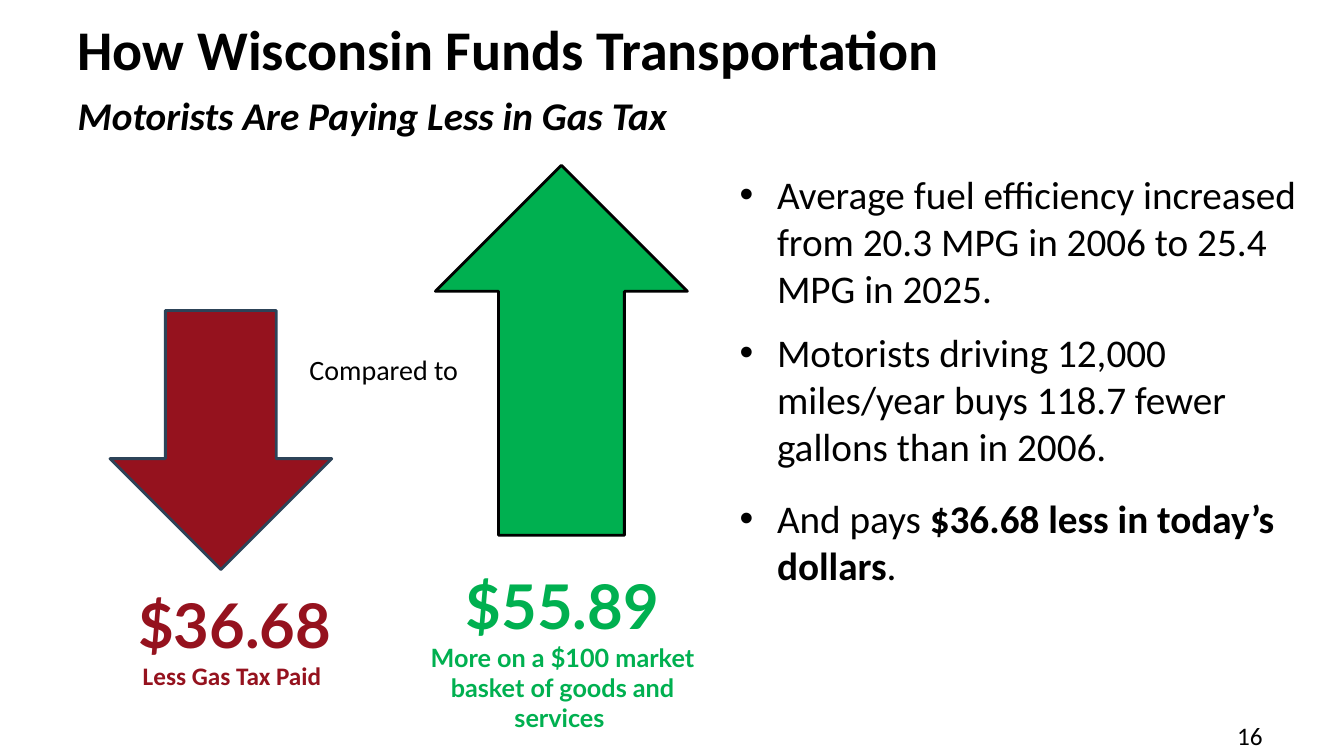
"""Build the slide comparing gas tax savings with the rise in prices."""
from lxml import etree
from pptx import Presentation
from pptx import util as u
from pptx.dml.color import RGBColor
from pptx.enum import shapes, text
from pptx.oxml.ns import qn

WIDTH, HEIGHT = 13.33, 7.5
BLACK, RED, GREEN, SLATE = "000000", "95121E", "00B050", "2D4358"


def color(value):
    """Turn a hex string into a colour."""
    return RGBColor.from_string(value)


def area(left, top, width, height):
    """Turn percentages of the slide's size into lengths."""
    shares = zip((left, top, width, height), (WIDTH, HEIGHT) * 2)
    return [u.Inches(share * side / 100) for share, side in shares]


def add_span(para, words, size=18, face="Calibri", ink=BLACK, bold=False, italic=False):
    """Append formatted words to a paragraph."""
    span = para.add_run()
    span.text = words
    font = span.font
    font.size, font.name = u.Pt(size), face
    font.bold, font.italic = bold, italic
    font.color.rgb = color(ink)


def add_bullet(para, indent=0.37):
    """Give a paragraph a hanging round bullet."""
    properties = para._p.get_or_add_pPr()
    properties.set("marL", str(u.Inches(indent)))
    properties.set("indent", str(-u.Inches(indent)))
    etree.SubElement(properties, qn("a:buFont")).set("typeface", "Arial")
    etree.SubElement(properties, qn("a:buChar")).set("char", "•")


def add_box(page, place):
    """Add a wrapping text box and return its frame."""
    frame = page.shapes.add_textbox(*area(*place)).text_frame
    frame.word_wrap = True
    return frame


def add_label(page, place, words, **style):
    """Add a one-line text box."""
    add_span(add_box(page, place).paragraphs[0], words, **style)


def add_title(page, place, heading, subheading):
    """Place the title and its italic second line."""
    title = page.shapes.title
    title.left, title.top, title.width, title.height = area(*place)
    frame = title.text_frame
    frame.vertical_anchor = text.MSO_ANCHOR.MIDDLE
    frame.auto_size = text.MSO_AUTO_SIZE.NONE
    para = frame.paragraphs[0]
    para.alignment = text.PP_ALIGN.LEFT
    para.line_spacing = u.Pt(40)
    add_span(para, heading, size=40, bold=True)
    para.add_line_break()
    add_span(para, subheading, size=28, bold=True, italic=True)


def add_bullets(page, place, items):
    """Add bulleted paragraphs, each a space before and its spans."""
    frame = add_box(page, place)
    for index, (space, spans) in enumerate(items):
        para = frame.add_paragraph() if index else frame.paragraphs[0]
        para.space_before = u.Pt(space)
        add_bullet(para)
        for words, bold in spans:
            add_span(para, words, size=28, bold=bold)


def add_amount(page, place, amount, caption, ink, face):
    """Add a large amount with a caption below it."""
    frame = add_box(page, place)
    lines = ((amount, 44, "Lato"), (caption, 18, face))
    for index, (words, size, family) in enumerate(lines):
        para = frame.add_paragraph() if index else frame.paragraphs[0]
        para.alignment = text.PP_ALIGN.CENTER
        add_span(para, words, size=size, face=family, ink=ink, bold=True)


def add_arrow(page, kind, place, fill, line):
    """Add an outlined block arrow."""
    arrow = page.shapes.add_shape(kind, *area(*place))
    arrow.shadow.inherit = False
    arrow.fill.solid()
    arrow.fill.fore_color.rgb = color(fill)
    arrow.line.color.rgb = color(line)
    arrow.line.width = u.Pt(2)


def main():
    """Build and save the deck."""
    deck = Presentation()
    deck.slide_width, deck.slide_height = u.Inches(WIDTH), u.Inches(HEIGHT)
    page = deck.slides.add_slide(deck.slide_layouts[5])
    add_title(page, (5.03, 2.53, 90, 16.67), "How Wisconsin Funds Transportation",
              "Motorists Are Paying Less in Gas Tax")
    add_bullets(page, (54.3, 21.87, 44.7, 69.33), [
        (0, [("Average fuel efficiency increased from 20.3 MPG in 2006 to 25.4 MPG in 2025.", False)]),
        (12, [("Motorists driving 12,000 miles/year buys 118.7 fewer gallons than in 2006.", False)]),
        (18, [("And pays ", False), ("$36.68 less in today’s dollars", True), (".", False)]),
    ])
    add_amount(page, (6.3, 76.93, 22.35, 15.2), "$36.68", "Less Gas Tax Paid ", RED, "Calibri")
    add_arrow(page, shapes.MSO_SHAPE.UP_ARROW, (32.4, 21.87, 18.75, 48.93), GREEN, BLACK)
    add_arrow(page, shapes.MSO_SHAPE.DOWN_ARROW, (8.18, 41.07, 16.5, 34.27), RED, SLATE)
    add_label(page, (91.3, 94.67, 7.5, 5.33), "16")
    add_amount(page, (30.68, 74.53, 22.35, 23.33), "$55.89",
               "More on a $100 market basket of goods and services ", GREEN, "Lato")
    add_label(page, (22.28, 46, 13.2, 5.87), "Compared to", size=20)
    deck.save("out.pptx")


if __name__ == "__main__":
    main()
